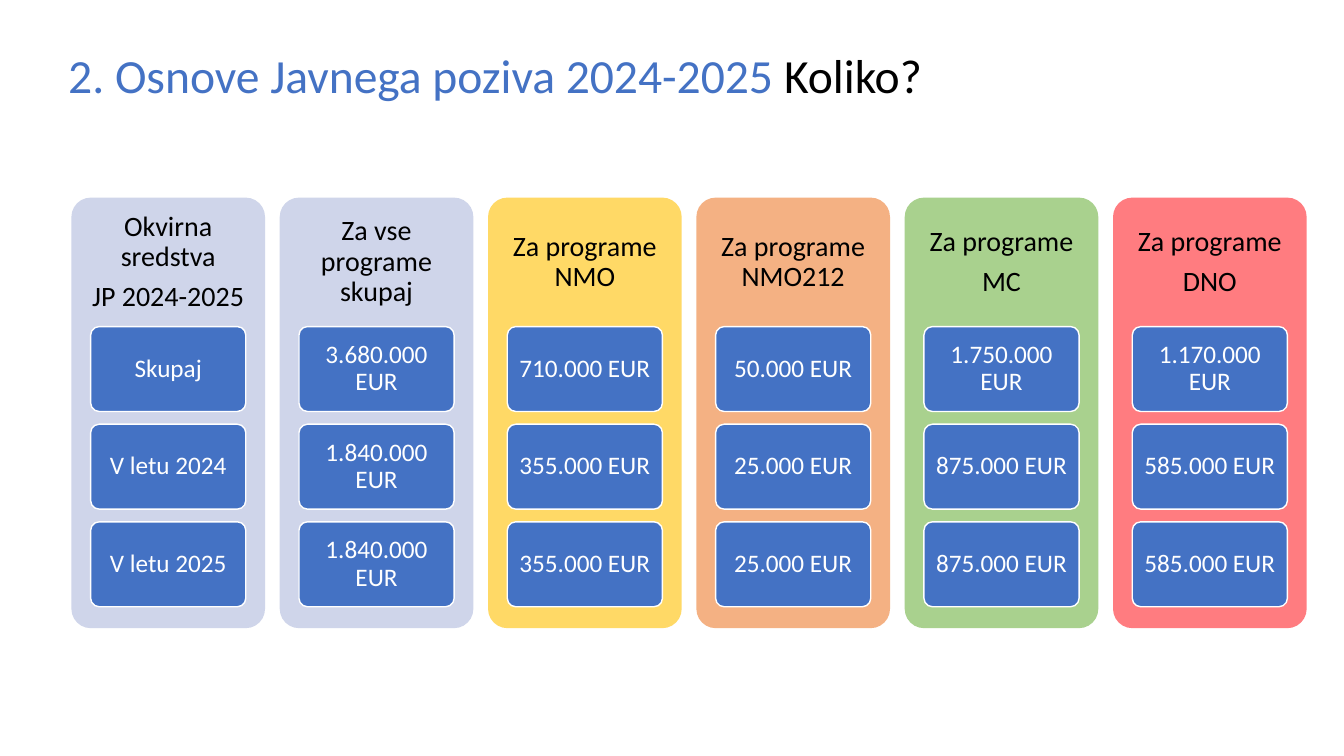
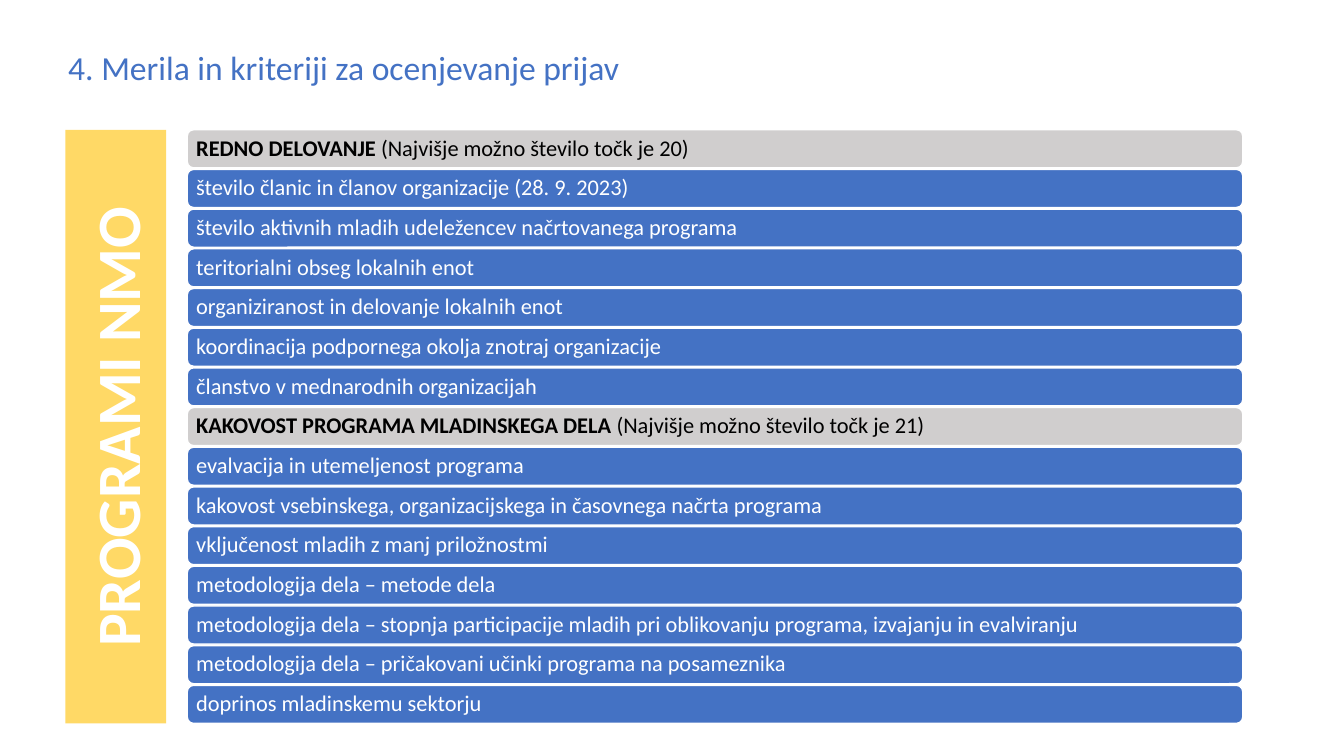
from pptx import Presentation
from pptx.dml.color import RGBColor
from pptx.enum.shapes import MSO_SHAPE
from pptx.enum.text import MSO_ANCHOR, PP_ALIGN
from pptx.util import Cm, Pt

ROUNDED, RECTANGLE = MSO_SHAPE.ROUNDED_RECTANGLE, MSO_SHAPE.RECTANGLE
MIDDLE, TOP = MSO_ANCHOR.MIDDLE, MSO_ANCHOR.TOP
LEFT, CENTER = PP_ALIGN.LEFT, PP_ALIGN.CENTER

BLUE = RGBColor(0x44, 0x72, 0xC4)
LAVENDER = RGBColor(0xCF, 0xD5, 0xEA)
YELLOW = RGBColor(0xFF, 0xD9, 0x66)
ORANGE = RGBColor(0xF4, 0xB1, 0x83)
GREEN = RGBColor(0xA9, 0xD1, 0x8E)
RED = RGBColor(0xFF, 0x7C, 0x80)
GREY = RGBColor(0xD0, 0xCE, 0xCE)
WHITE = RGBColor(0xFF, 0xFF, 0xFF)
BLACK = RGBColor(0x00, 0x00, 0x00)
FONT = "Calibri"


def write_text(box, paragraphs, size, align=LEFT, anchor=MIDDLE, wrap=True,
               margins=(0.13, 0.1, 0.13, 0.1), line_spacing=0.9):
    """Fill a box; each paragraph is a list of (text, font formats) spans."""
    frame = box.text_frame
    left, top, right, bottom = (Cm(margin) for margin in margins)
    frame_format = {"word_wrap": wrap, "vertical_anchor": anchor,
                    "margin_left": left, "margin_top": top,
                    "margin_right": right, "margin_bottom": bottom}
    for name, value in frame_format.items():
        setattr(frame, name, value)
    for index, spans in enumerate(paragraphs):
        paragraph = frame.add_paragraph() if index else frame.paragraphs[0]
        paragraph.alignment = align
        paragraph.line_spacing = line_spacing
        paragraph.space_before = Pt(7 if index else 0)
        for text, formats in spans:
            span = paragraph.add_run()
            span.text = text
            font_format = {"name": FONT, "size": Pt(size), "bold": False, **formats}
            color = font_format.pop("color")
            for name, value in font_format.items():
                setattr(span.font, name, value)
            span.font.color.rgb = color


def add_block(page, preset, place, fill, outline=None, corner=None):
    block = page.shapes.add_shape(preset, *(Cm(length) for length in place))
    block.shadow.inherit = False
    block.fill.solid()
    block.fill.fore_color.rgb = fill
    if outline is None:
        block.line.fill.background()
    else:
        block.line.color.rgb = outline
        block.line.width = Pt(1)
    if corner is not None:
        block.adjustments[0] = corner
    return block


deck = Presentation()
deck.slide_width, deck.slide_height = Cm(33.87), Cm(19.05)

# Pages and titles
titles = [
    (34, 22.1, 1.7, [("2. Osnove Javnega poziva 2024-2025 ", {"color": BLUE}),
                     ("Koliko?", {"color": BLACK})]),
    (24, 14.53, 1.27, [("4. Merila in kriteriji za ocenjevanje prijav", {"color": BLUE})]),
]
pages = []
for size, width, height, spans in titles:
    page = deck.slides.add_slide(deck.slide_layouts[6])
    title = page.shapes.add_textbox(Cm(1.47), Cm(1.04), Cm(width), Cm(height))
    write_text(title, [spans], size, anchor=TOP, wrap=False,
               margins=(0.25, 0.13, 0.25, 0.13), line_spacing=1.0)
    pages.append(page)
funds_page, criteria_page = pages

# Funds: one panel per programme, one card per amount
programmes = [
    (LAVENDER, ["Okvirna sredstva", "JP 2024-2025"], ["Skupaj", "V letu 2024", "V letu 2025"]),
    (LAVENDER, ["Za vse programe skupaj"], ["3.680.000 EUR", "1.840.000 EUR", "1.840.000 EUR"]),
    (YELLOW, ["Za programe NMO"], ["710.000 EUR", "355.000 EUR", "355.000 EUR"]),
    (ORANGE, ["Za programe NMO212"], ["50.000 EUR", "25.000 EUR", "25.000 EUR"]),
    (GREEN, ["Za programe", "MC"], ["1.750.000 EUR", "875.000 EUR", "875.000 EUR"]),
    (RED, ["Za programe", "DNO"], ["1.170.000 EUR", "585.000 EUR", "585.000 EUR"]),
]
PANEL_LEFT, PANEL_TOP, PANEL_WIDTH, PANEL_HEIGHT, PANEL_PITCH = 1.8, 4.98, 4.88, 10.85, 5.25
CARD_TOP, CARD_WIDTH, CARD_HEIGHT, CARD_PITCH = 8.23, 3.91, 2.14, 2.46

for column, (fill, heading, amounts) in enumerate(programmes):
    panel_left = PANEL_LEFT + column * PANEL_PITCH
    panel = add_block(funds_page, ROUNDED,
                      (panel_left, PANEL_TOP, PANEL_WIDTH, PANEL_HEIGHT), fill, corner=0.1)
    # The deep bottom margin keeps the heading above the cards
    write_text(panel, [[(line, {"color": BLACK})] for line in heading], 20, CENTER,
               margins=(0.05, 0.05, 0.05, 7.65))
    card_left = panel_left + (PANEL_WIDTH - CARD_WIDTH) / 2
    for row, amount in enumerate(amounts):
        card = add_block(funds_page, ROUNDED,
                         (card_left, CARD_TOP + row * CARD_PITCH, CARD_WIDTH, CARD_HEIGHT),
                         BLUE, WHITE, 0.1)
        write_text(card, [[(amount, {"color": WHITE})]], 18, CENTER)

# Criteria: grey bars head the groups, blue bars list the criteria
criteria_groups = [
    ("REDNO DELOVANJE ", "(Najvišje možno število točk je 20)", [
        "število članic in članov organizacije (28. 9. 2023)",
        "število aktivnih mladih udeležencev načrtovanega programa",
        "teritorialni obseg lokalnih enot",
        "organiziranost in delovanje lokalnih enot",
        "koordinacija podpornega okolja znotraj organizacije",
        "članstvo v mednarodnih organizacijah",
    ]),
    ("KAKOVOST PROGRAMA MLADINSKEGA DELA ", "(Najvišje možno število točk je 21)", [
        "evalvacija in utemeljenost programa",
        "kakovost vsebinskega, organizacijskega in časovnega načrta programa",
        "vključenost mladih z manj priložnostmi",
        "metodologija dela – metode dela",
        "metodologija dela – stopnja participacije mladih pri oblikovanju programa, "
        "izvajanju in evalviranju",
        "metodologija dela – pričakovani učinki programa na posameznika",
        "doprinos mladinskemu sektorju",
    ]),
]
BAR_LEFT, BAR_TOP, BAR_WIDTH, BAR_HEIGHT, BAR_PITCH = 4.72, 3.27, 26.6, 0.96, 1.0

bars = []
for heading, points, criteria in criteria_groups:
    bars.append((GREY, [(heading, {"color": BLACK, "bold": True}), (points, {"color": BLACK})]))
    bars += [(BLUE, [(criterion, {"color": WHITE})]) for criterion in criteria]

for row, (fill, spans) in enumerate(bars):
    bar = add_block(criteria_page, ROUNDED,
                    (BAR_LEFT, BAR_TOP + row * BAR_PITCH, BAR_WIDTH, BAR_HEIGHT), fill, WHITE)
    write_text(bar, [spans], 16, margins=(0.18, 0.1, 0.18, 0.1))

# The upright banner is a wide one turned a quarter left about its centre
BANNER_LEFT, BANNER_WIDTH = 1.65, 2.54
BANNER_HEIGHT = (len(bars) - 1) * BAR_PITCH + BAR_HEIGHT
banner = add_block(criteria_page, RECTANGLE,
                   (BANNER_LEFT + (BANNER_WIDTH - BANNER_HEIGHT) / 2,
                    BAR_TOP + (BANNER_HEIGHT - BANNER_WIDTH) / 2,
                    BANNER_HEIGHT, BANNER_WIDTH), YELLOW)
banner.rotation = 270
write_text(banner, [[("PROGRAMI NMO", {"color": WHITE, "bold": True})]], 44, CENTER,
           line_spacing=1.0)

deck.save("out.pptx")
